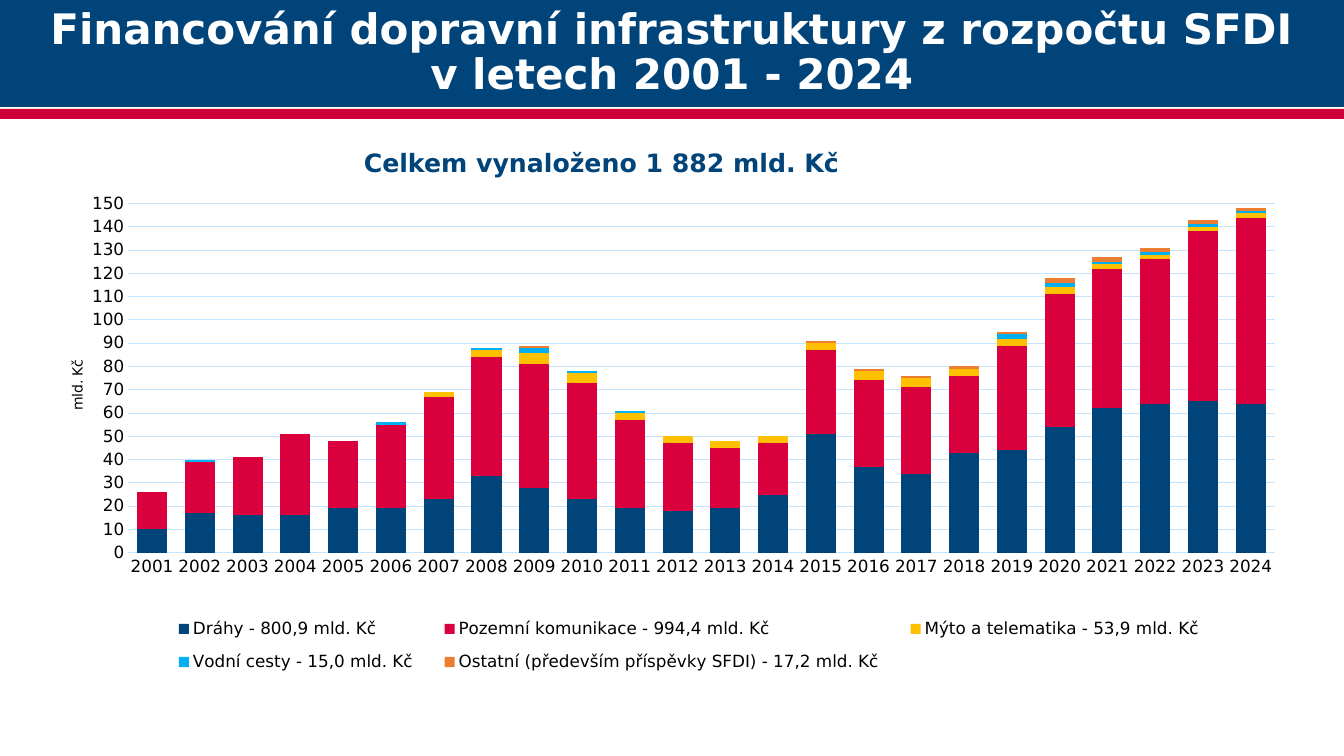
from dataclasses import dataclass

from lxml import etree
from pptx import Presentation
from pptx import util as u
from pptx.chart.data import CategoryChartData
from pptx.dml.color import RGBColor
from pptx.enum import chart as charts, shapes, text
from pptx.oxml.ns import qn


@dataclass(frozen=True)
class Theme:
    """Colours, font and type sizes of the slide."""
    font: str = "DejaVu Sans"
    navy: str = "00447A"
    red: str = "CD003A"
    white: str = "FFFFFF"
    black: str = "000000"
    grid: str = "C5E5FF"
    series: tuple = ("00447A", "DA003D", "FFC000", "00B0F0", "ED7D31")
    title_size: int = 30
    heading_size: int = 18
    label_size: int = 12
    small_size: int = 10


YEARS = [str(year) for year in range(2001, 2025)]
FUNDING = {
    "Dráhy - 800,9 mld. Kč": (
        10, 17, 16, 16, 19, 19, 23, 33, 28, 23, 19, 18,
        19, 25, 51, 37, 34, 43, 44, 54, 62, 64, 65, 64),
    "Pozemní komunikace - 994,4 mld. Kč": (
        16, 22, 25, 35, 29, 36, 44, 51, 53, 50, 38, 29,
        26, 22, 36, 37, 37, 33, 45, 57, 60, 62, 73, 80),
    "Mýto a telematika - 53,9 mld. Kč": (
        0, 0, 0, 0, 0, 0, 2, 3, 5, 4, 3, 3,
        3, 3, 3, 4, 4, 3, 3, 3, 2, 2, 2, 2),
    "Vodní cesty - 15,0 mld. Kč": (
        0, 1, 0, 0, 0, 1, 0, 1, 2, 1, 1, 0,
        0, 0, 0, 0, 0, 0, 2, 2, 1, 1, 1, 1),
    "Ostatní (především příspěvky SFDI) - 17,2 mld. Kč": (
        0, 0, 0, 0, 0, 0, 0, 0, 1, 0, 0, 0,
        0, 0, 1, 1, 1, 1, 1, 2, 2, 2, 2, 1),
}


class SlideBuilder:
    """Draws themed elements on the current slide."""

    def __init__(self, slide, theme):
        self.slide = slide
        self.theme = theme

    def style_font(self, font, size, color, bold=False):
        """Apply the theme font with a size and colour."""
        font.name = self.theme.font
        font.size = u.Pt(size)
        font.bold = bold
        font.color.rgb = RGBColor.from_string(color)

    def style_line(self, line):
        """Give a chart line the grid colour and weight."""
        line.color.rgb = RGBColor.from_string(self.theme.grid)
        line.width = u.Pt(0.75)

    def band(self, top, height, color):
        """Add a full-width filled band."""
        shape = self.slide.shapes.add_shape(
            shapes.MSO_SHAPE.RECTANGLE, 0, u.Inches(top), u.Inches(13.33), u.Inches(height))
        shape.shadow.inherit = False
        shape.fill.solid()
        shape.fill.fore_color.rgb = RGBColor.from_string(color)
        shape.line.fill.background()
        return shape

    def title(self, lines):
        """Add the title band with centred lines."""
        frame = self.band(0, 1.06, self.theme.navy).text_frame
        frame.word_wrap = True
        frame.vertical_anchor = text.MSO_ANCHOR.MIDDLE
        paragraph = frame.paragraphs[0]
        paragraph.text = "\v".join(lines)
        paragraph.alignment = text.PP_ALIGN.CENTER
        paragraph.line_spacing = 0.9
        self.style_font(paragraph.font, self.theme.title_size, self.theme.white, True)

    def heading(self, words, left, top, width, height):
        """Add a bold heading above the chart."""
        box = self.slide.shapes.add_textbox(*map(u.Inches, (left, top, width, height)))
        box.text_frame.word_wrap = True
        paragraph = box.text_frame.paragraphs[0]
        paragraph.text = words
        self.style_font(paragraph.font, self.theme.heading_size, self.theme.navy, True)

    def place(self, element, successors, inner=False, **fractions):
        """Set a manual layout on a chart element as fractions of the chart."""
        for old in element.findall(qn("c:layout")):
            element.remove(old)
        layout = etree.Element(qn("c:layout"))
        manual = etree.SubElement(layout, qn("c:manualLayout"))
        settings = {"layoutTarget": "inner"} if inner else {}
        settings |= {"xMode": "edge", "yMode": "edge"} | fractions
        for name, value in settings.items():
            etree.SubElement(manual, qn(f"c:{name}")).set("val", str(value))
        follower = next((child for child in element
                         if child.tag in [qn(name) for name in successors]), None)
        if follower is None:
            element.append(layout)
        else:
            follower.addprevious(layout)

    def stacked_columns(self, categories, series, axis_title, left, top, width, height):
        """Add a stacked column chart with its axes and legend."""
        theme = self.theme
        data = CategoryChartData(number_format="#,##0")
        data.categories = categories
        for name, values in series.items():
            data.add_series(name, values)
        chart = self.slide.shapes.add_chart(
            charts.XL_CHART_TYPE.COLUMN_STACKED,
            *map(u.Inches, (left, top, width, height)), data).chart
        chart.has_title = False
        self.style_font(chart.font, theme.small_size, theme.navy)
        plot = chart.plots[0]
        plot.gap_width, plot.overlap, plot.vary_by_categories = 59, 100, False
        for column, color in zip(plot.series, theme.series):
            column.format.fill.solid()
            column.format.fill.fore_color.rgb = RGBColor.from_string(color)
        self.axes(chart, axis_title)
        self.legend(chart)
        plot_area = chart._chartSpace.chart.plotArea
        self.place(plot_area, ["c:barChart"], inner=True, x=0.06, y=0.04, w=0.92, h=0.66)

    def axes(self, chart, axis_title):
        """Style both axes and title the value axis."""
        theme = self.theme
        for axis in (chart.category_axis, chart.value_axis):
            axis.major_tick_mark = axis.minor_tick_mark = charts.XL_TICK_MARK.NONE
            self.style_font(axis.tick_labels.font, theme.label_size, theme.black)
        self.style_line(chart.category_axis.format.line)
        values = chart.value_axis
        values.minimum_scale, values.maximum_scale, values.major_unit = 0, 150, 10
        values.tick_labels.number_format = "#,##0"
        values.tick_labels.number_format_is_linked = False
        values.format.line.fill.background()
        self.style_line(values.major_gridlines.format.line)
        frame = values.axis_title.text_frame
        frame.text = axis_title
        self.style_font(frame.paragraphs[0].font, theme.small_size, theme.black)
        self.place(values.axis_title._element, ["c:overlay", "c:spPr", "c:txPr"], x=0.01, y=0.33)

    def legend(self, chart):
        """Add the legend below the columns."""
        chart.has_legend = True
        chart.legend.position = charts.XL_LEGEND_POSITION.BOTTOM
        chart.legend.include_in_layout = False
        self.style_font(chart.legend.font, self.theme.label_size, self.theme.black)
        self.place(chart.legend._element, ["c:overlay", "c:spPr", "c:txPr"],
                   x=0.08, y=0.8, w=0.86, h=0.15)


def main():
    """Build and save the funding slide."""
    presentation = Presentation()
    presentation.slide_width = u.Inches(13.33)
    presentation.slide_height = u.Inches(7.5)
    theme = Theme()
    builder = SlideBuilder(presentation.slides.add_slide(presentation.slide_layouts[6]), theme)
    builder.band(1.08, 0.1, theme.red)
    builder.title(["Financování dopravní infrastruktury z rozpočtu SFDI", "v letech 2001 - 2024"])
    builder.heading("Celkem vynaloženo 1 882 mld. Kč", 3.51, 1.41, 8.59, 0.4)
    builder.stacked_columns(YEARS, FUNDING, "mld. Kč", 0.53, 1.81, 12.36, 5.25)
    presentation.save("out.pptx")


if __name__ == "__main__":
    main()
